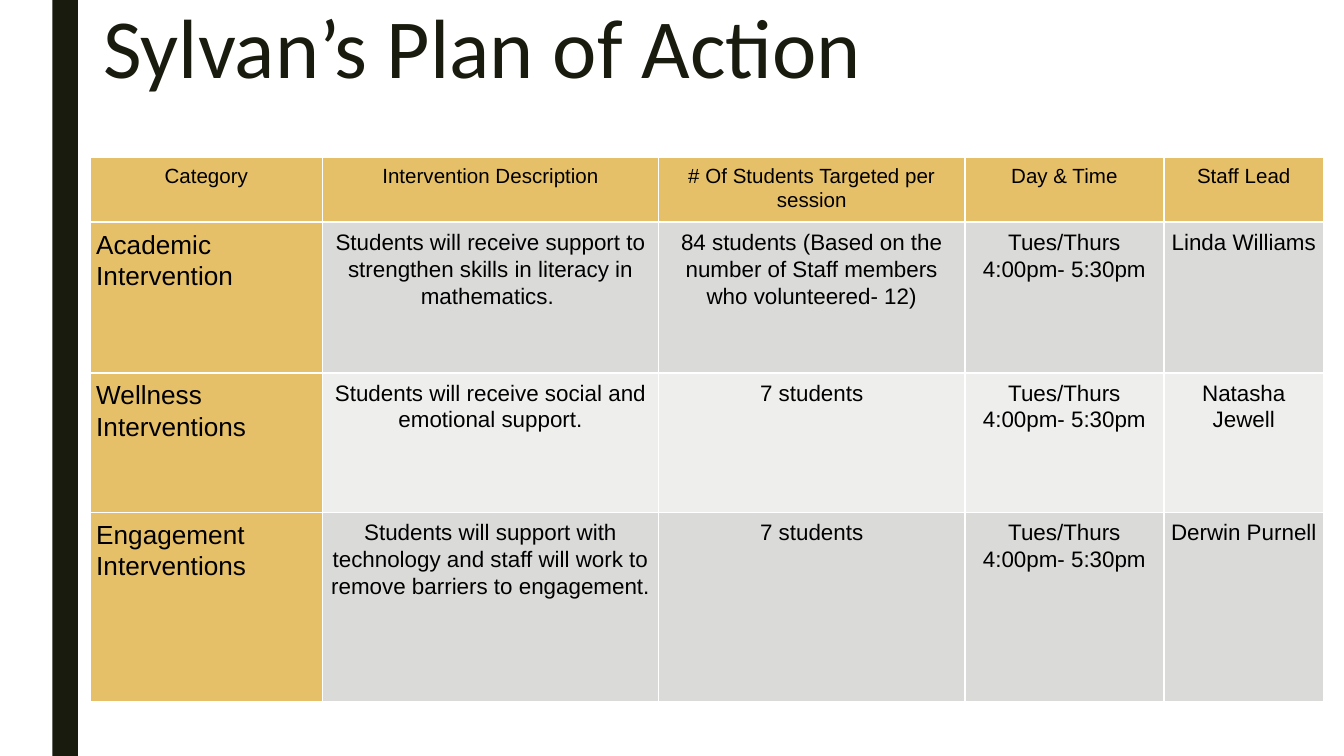
from lxml import etree
from pptx import Presentation
from pptx import util as u
from pptx.dml.color import RGBColor
from pptx.enum import shapes, text
from pptx.oxml.ns import qn

COLORS = {
    "dark": "191B0E",
    "gold": "E6C069",
    "gray": "DADBD9",
    "pale": "EEEEED",
    "white": "FFFFFF",
    "black": "000000",
}
COLUMN_WIDTHS = [1.73, 2.5, 2.28, 1.48, 1.19]
ROW_HEIGHTS = [0.42, 1.12, 1.04, 1.41]
CELL_MARGIN = u.Pt(3.3)
SESSION = "Tues/Thurs\n4:00pm- 5:30pm"
ROWS = [
    ["Category", "Intervention Description", "# Of Students Targeted per session",
     "Day & Time", "Staff Lead"],
    ["Academic Intervention",
     "Students will receive support to strengthen skills in literacy in mathematics. ",
     "84 students (Based on the number of Staff members who volunteered- 12)",
     SESSION, "Linda Williams"],
    ["Wellness Interventions", "Students will receive social and emotional support.",
     "7 students", SESSION, "Natasha Jewell"],
    ["Engagement Interventions",
     "Students will support with technology and staff will work to remove barriers "
     "to engagement. ",
     "7 students", SESSION, "Derwin Purnell"],
]


def color(name):
    return RGBColor.from_string(COLORS[name])


def style_paragraph(paragraph, font, size, ink, spacing, align):
    paragraph.font.name = font
    paragraph.font.size = u.Pt(size)
    paragraph.font.color.rgb = color(ink)
    paragraph.line_spacing = spacing
    paragraph.alignment = align


def add_side_bar(slide, height):
    bar = slide.shapes.add_shape(shapes.MSO_SHAPE.RECTANGLE, u.Inches(0.39), 0,
                                 u.Inches(0.19), height)
    bar.shadow.inherit = False
    bar.fill.solid()
    bar.fill.fore_color.rgb = color("dark")
    bar.line.fill.background()


def add_title(slide):
    box = slide.shapes.add_textbox(u.Inches(0.67), 0, u.Inches(7.88), u.Inches(1.22))
    frame = box.text_frame
    frame.word_wrap = True
    frame.vertical_anchor = text.MSO_ANCHOR.TOP
    frame.text = "Sylvan’s Plan of Action"
    style_paragraph(frame.paragraphs[0], "Calibri", 45, "dark", 0.89, text.PP_ALIGN.LEFT)


def add_borders(cell):
    properties = cell._tc.get_or_add_tcPr()
    for index, side in enumerate(("lnL", "lnR", "lnT", "lnB")):
        line = etree.Element(qn(f"a:{side}"), w=str(u.Pt(1)))
        fill = etree.SubElement(line, qn("a:solidFill"))
        etree.SubElement(fill, qn("a:srgbClr"), val=COLORS["white"])
        properties.insert(index, line)


def fill_cell(cell, content, row, column):
    if row == 0 or column == 0:
        shade = "gold"
    else:
        shade = "gray" if row % 2 else "pale"
    cell.fill.solid()
    cell.fill.fore_color.rgb = color(shade)
    cell.margin_left = cell.margin_right = CELL_MARGIN
    cell.margin_top = cell.margin_bottom = CELL_MARGIN
    add_borders(cell)

    is_label = row > 0 and column == 0
    size = 11 if row == 0 else 14 if is_label else 12
    align = text.PP_ALIGN.LEFT if is_label else text.PP_ALIGN.CENTER
    cell.text = content
    for paragraph in cell.text_frame.paragraphs:
        style_paragraph(paragraph, "Arial", size, "black", 1.07, align)
        if row > 0 and column == 1:
            paragraph.space_after = u.Pt(12)


def add_plan_table(slide):
    frame = slide.shapes.add_table(len(ROWS), len(COLUMN_WIDTHS), u.Inches(0.67),
                                   u.Inches(1.17), u.Inches(sum(COLUMN_WIDTHS)),
                                   u.Inches(sum(ROW_HEIGHTS)))
    table = frame.table
    for column, width in zip(table.columns, COLUMN_WIDTHS):
        column.width = u.Inches(width)
    for row, height in zip(table.rows, ROW_HEIGHTS):
        row.height = u.Inches(height)
    for row, contents in enumerate(ROWS):
        for column, content in enumerate(contents):
            fill_cell(table.cell(row, column), content, row, column)


def main():
    deck = Presentation()
    deck.slide_width = u.Inches(10)
    deck.slide_height = deck.slide_width * 9 // 16
    slide = deck.slides.add_slide(deck.slide_layouts[6])
    add_side_bar(slide, deck.slide_height)
    add_title(slide)
    add_plan_table(slide)
    deck.save("out.pptx")


if __name__ == "__main__":
    main()
